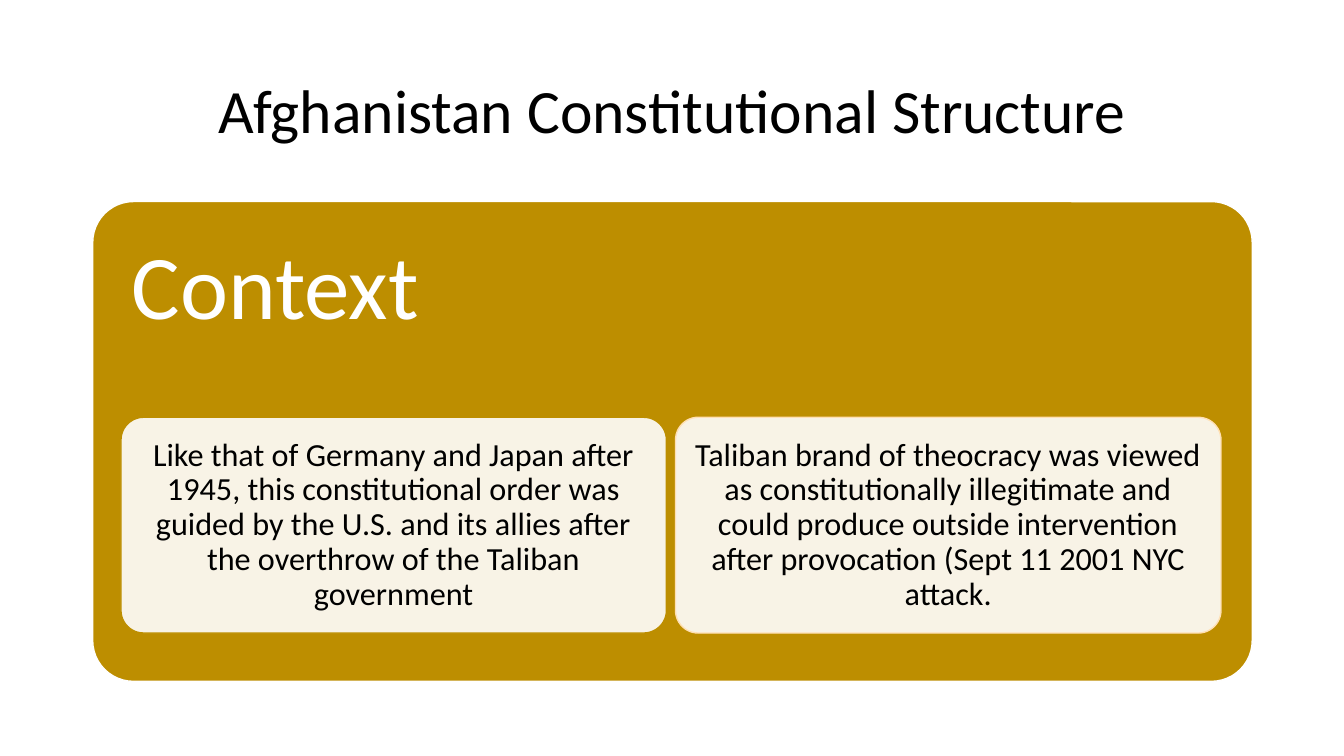
from lxml import etree
from pptx import Presentation
from pptx.dml.color import RGBColor
from pptx.enum.shapes import MSO_SHAPE
from pptx.enum.text import MSO_ANCHOR, MSO_AUTO_SIZE, PP_ALIGN
from pptx.oxml.ns import qn
from pptx.util import Inches, Pt

COLORS = {"gold": "BD8E00", "cream": "FFE0B4", "white": "FFFFFF", "black": "000000"}
CARD_LEFT, CARD_TOP, CARD_WIDTH, CARD_HEIGHT = 1.2, 4.14, 5.41, 2.14
CARD_STEP = 5.5
CARDS = [
    ("Like that of Germany and Japan after 1945, this constitutional order was guided "
     "by the U.S. and its allies after the overthrow of the Taliban government", "gold"),
    ("Taliban brand of theocracy was viewed as constitutionally illegitimate and could "
     "produce outside intervention after provocation (Sept 11 2001 NYC attack.", "cream"),
]


def write_text(shape, text, size, color="black", align=PP_ALIGN.CENTER,
               anchor=MSO_ANCHOR.MIDDLE, inset=0.1):
    frame = shape.text_frame
    frame.word_wrap = True
    frame.auto_size = MSO_AUTO_SIZE.NONE
    frame.vertical_anchor = anchor
    frame.margin_left = frame.margin_right = Inches(inset)
    frame.margin_top = frame.margin_bottom = Inches(inset)
    paragraph = frame.paragraphs[0]
    paragraph.alignment = align
    paragraph.line_spacing = 0.9
    run = paragraph.add_run()
    run.text = text
    run.font.name = "Calibri"
    run.font.size = Pt(size)
    run.font.color.rgb = RGBColor.from_string(COLORS[color])


def add_panel(left, top, width, height, corner, fill, line):
    """Add a rounded rectangle with a one-point outline."""
    shape = slide.shapes.add_shape(MSO_SHAPE.ROUNDED_RECTANGLE, Inches(left), Inches(top),
                                   Inches(width), Inches(height))
    shape.adjustments[0] = corner
    shape.shadow.inherit = False
    shape.fill.solid()
    shape.fill.fore_color.rgb = RGBColor.from_string(COLORS[fill])
    shape.line.color.rgb = RGBColor.from_string(COLORS[line])
    shape.line.width = Pt(1)
    return shape


presentation = Presentation()
presentation.slide_width = Inches(13.33)
presentation.slide_height = Inches(7.5)
slide = presentation.slides.add_slide(presentation.slide_layouts[5])

title = slide.shapes.title
title.left, title.top = Inches(0.92), Inches(0.4)
title.width, title.height = Inches(11.5), Inches(1.45)
write_text(title, "Afghanistan Constitutional Structure", 44)

context = add_panel(0.92, 2, 11.5, 4.76, 0.085, "gold", "white")
write_text(context, "Context", 65, color="white", align=PP_ALIGN.LEFT,
           anchor=MSO_ANCHOR.TOP, inset=0.27)

for index, (text, line) in enumerate(CARDS):
    card = add_panel(CARD_LEFT + index * CARD_STEP, CARD_TOP, CARD_WIDTH, CARD_HEIGHT,
                     0.105, "white", line)
    fill_color = card.fill._xPr.find(qn("a:solidFill"))[0]
    etree.SubElement(fill_color, qn("a:alpha"), val="90000")
    write_text(card, text, 23)

presentation.save("out.pptx")
